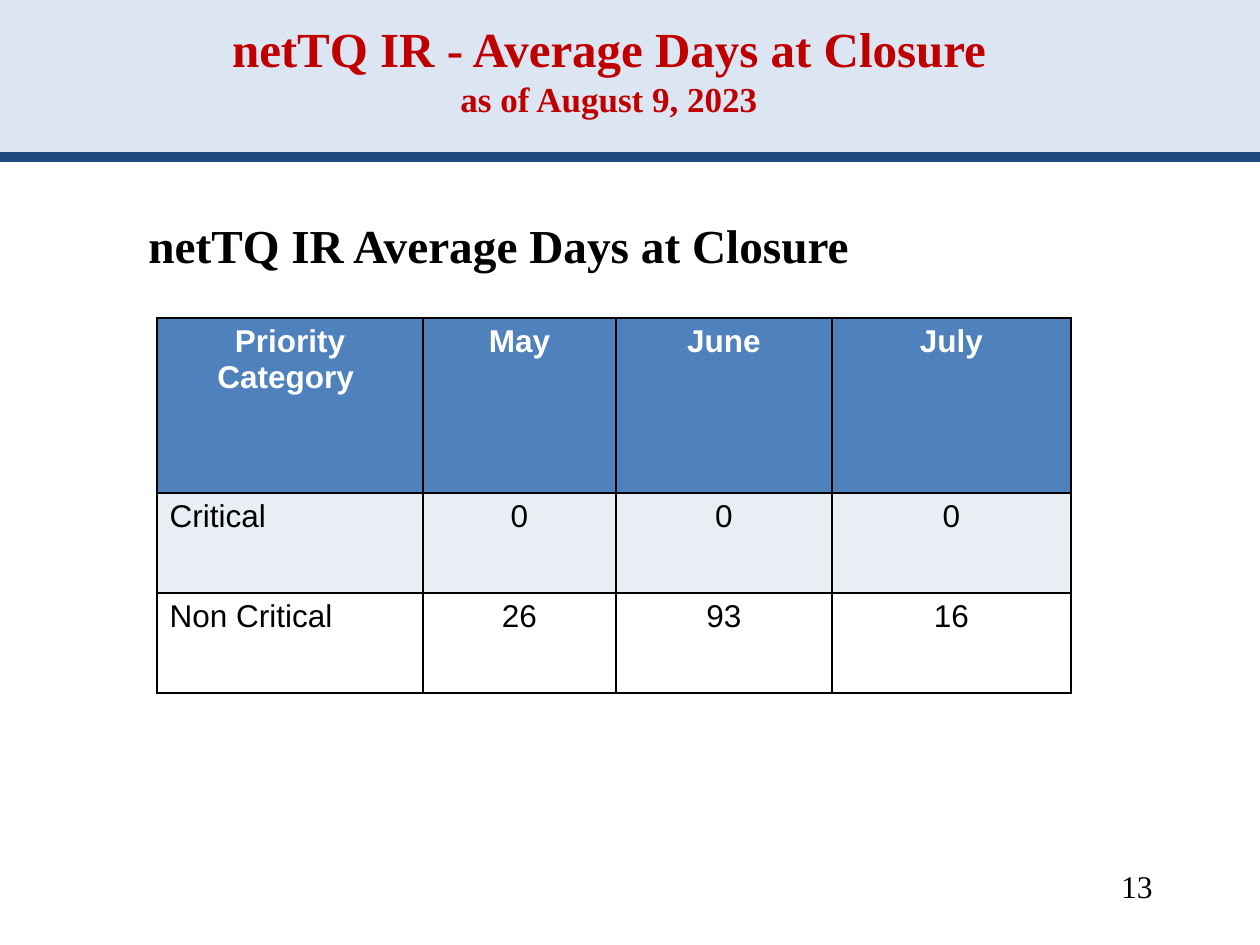
from dataclasses import dataclass
from typing import NamedTuple

from lxml import etree
from pptx import Presentation
from pptx import util as u
from pptx.dml.color import RGBColor
from pptx.enum import shapes, text
from pptx.oxml import ns

SCALE = 914400 / 126  # EMU in one px
LEFT, MID, RIGHT = text.PP_ALIGN.LEFT, text.PP_ALIGN.CENTER, text.PP_ALIGN.RIGHT


@dataclass(frozen=True)
class Theme:
    band: str = "DCE6F2"
    rule: str = "1F497D"
    title: str = "C00000"
    ink: str = "000000"
    head: str = "4F81BD"
    tint: str = "E9EDF4"
    paper: str = "FFFFFF"
    serif: str = "Times New Roman"
    sans: str = "Arial"
    big: int = 28
    sub: int = 20
    lead: int = 27
    base: int = 18


class Box(NamedTuple):
    x: int
    y: int
    w: int
    h: int


class Row(NamedTuple):
    cells: tuple
    height: int
    fill: str
    color: str
    bold: bool
    first: text.PP_ALIGN


T = Theme()
COLS = (266, 193, 216, 239)
ROWS = (
    Row(("Priority Category ", "May", "June", "July"), 175, T.head, T.paper, True, MID),
    Row(("Critical", "0", "0", "0"), 100, T.tint, T.ink, False, LEFT),
    Row(("Non Critical", "26", "93", "16"), 100, T.paper, T.ink, False, LEFT),
)


def px(n: int) -> u.Emu:
    return u.Emu(round(n * SCALE))


def place(box: Box) -> list:
    return [px(n) for n in box]


def style(font, size: int, color: str, name: str, bold: bool = False) -> None:
    for key, val in {"size": u.Pt(size), "name": name, "bold": bold}.items():
        setattr(font, key, val)
    font.color.rgb = RGBColor.from_string(color)


def write(para, words: str, align, *look) -> None:
    para.alignment = align
    run = para.add_run()
    run.text = words
    style(run.font, *look)


def label(slide, box: Box, words: str, align, *look) -> None:
    frame = slide.shapes.add_textbox(*place(box)).text_frame
    frame.word_wrap = True
    write(frame.paragraphs[0], words, align, *look)


def edge(cell, color: str, width: int) -> None:
    props = cell._tc.get_or_add_tcPr()
    for side in ("lnL", "lnR", "lnT", "lnB"):
        line = etree.SubElement(props, ns.qn(f"a:{side}"), w=str(u.Pt(width)))
        fill = etree.SubElement(line, ns.qn("a:solidFill"))
        etree.SubElement(fill, ns.qn("a:srgbClr"), val=color)


def band(slide) -> None:
    rect = slide.shapes.add_shape(shapes.MSO_SHAPE.RECTANGLE, *place(Box(0, 0, 1260, 161)))
    rect.shadow.inherit = False
    rect.fill.solid()
    rect.fill.fore_color.rgb = RGBColor.from_string(T.band)
    rect.line.fill.background()
    rule = slide.shapes.add_connector(
        shapes.MSO_CONNECTOR.STRAIGHT, px(0), px(157), px(1260), px(157))
    rule.line.color.rgb = RGBColor.from_string(T.rule)
    rule.line.width = u.Pt(5.5)
    etree.SubElement(rule._element.spPr, ns.qn("a:effectLst"))


def title(slide) -> None:
    shape = slide.shapes.title
    for key, val in zip(("left", "top", "width", "height"), place(Box(21, 0, 1176, 126))):
        setattr(shape, key, val)
    frame = shape.text_frame
    frame.vertical_anchor = text.MSO_ANCHOR.BOTTOM
    para = frame.paragraphs[0]
    write(para, "netTQ IR - Average Days at Closure", MID, T.big, T.title, T.serif, True)
    para.add_line_break()
    write(para, "as of August 9, 2023", MID, T.sub, T.title, T.serif, True)
    # Keep the title above the band in reading order only
    shape._element.getparent().append(shape._element)


def grid(slide, x: int, y: int) -> None:
    box = Box(x, y, sum(COLS), sum(row.height for row in ROWS))
    table = slide.shapes.add_table(len(ROWS), len(COLS), *place(box)).table
    for col, width in zip(table.columns, COLS):
        col.width = px(width)
    for r, row in enumerate(ROWS):
        table.rows[r].height = px(row.height)
        for c, words in enumerate(row.cells):
            cell = table.cell(r, c)
            edge(cell, T.ink, 1)
            cell.fill.solid()
            cell.fill.fore_color.rgb = RGBColor.from_string(row.fill)
            write(cell.text_frame.paragraphs[0], words, MID if c else row.first,
                  T.base, row.color, T.sans, row.bold)


def main() -> None:
    deck = Presentation()
    deck.slide_width, deck.slide_height = px(1260), px(945)
    slide = deck.slides.add_slide(deck.slide_layouts[5])

    # Header
    band(slide)
    title(slide)

    # Heading and table
    label(slide, Box(136, 210, 1061, 71), "netTQ IR Average Days at Closure",
          LEFT, T.lead, T.ink, T.serif, True)
    grid(slide, 157, 318)

    # Page number
    label(slide, Box(903, 861, 262, 63), "13", RIGHT, T.base, T.ink, T.serif)

    deck.save("out.pptx")


if __name__ == "__main__":
    main()
